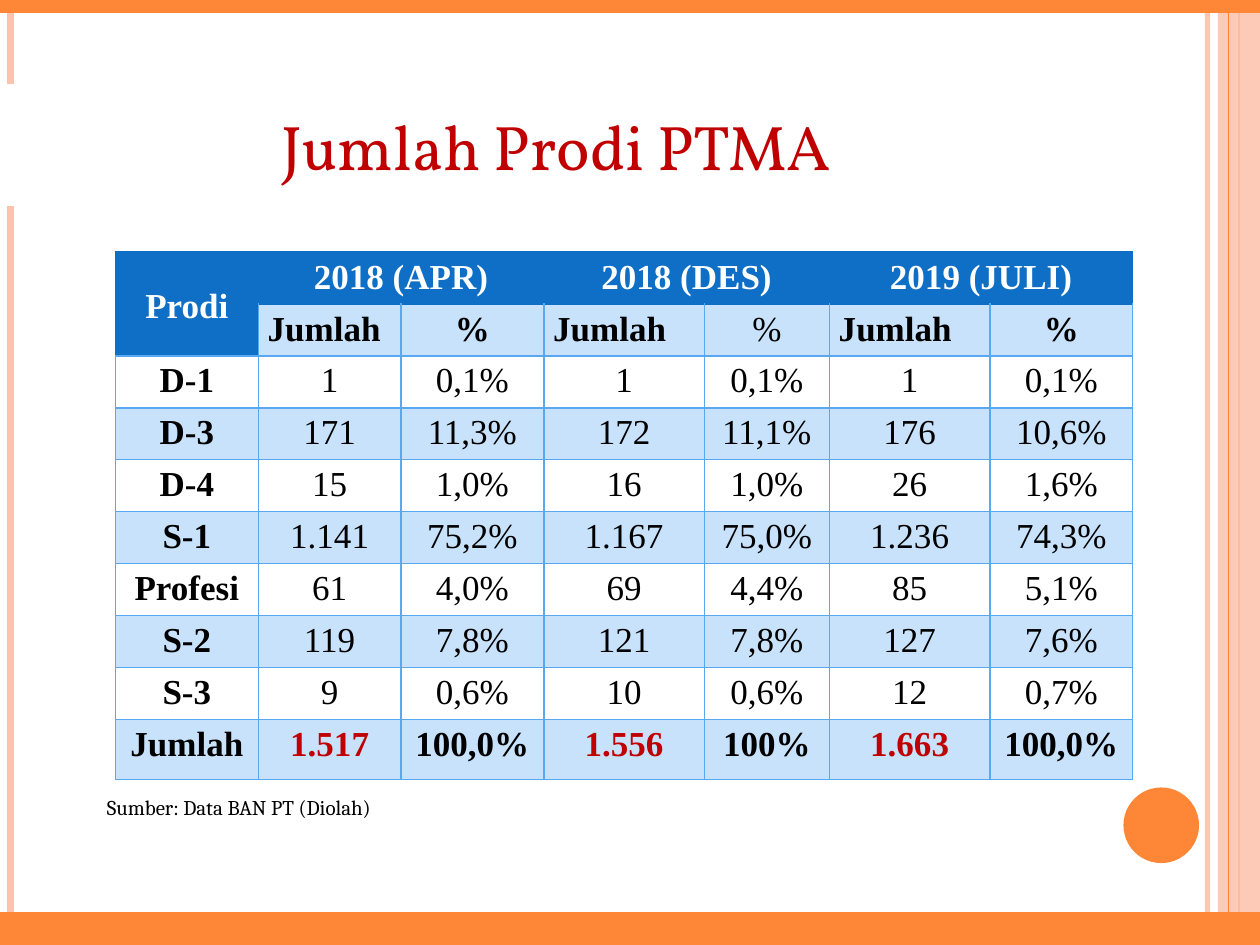
from dataclasses import dataclass

from lxml.etree import SubElement
from pptx import Presentation
from pptx.dml.color import RGBColor
from pptx.enum.shapes import MSO_CONNECTOR, MSO_SHAPE
from pptx.enum.text import MSO_ANCHOR, PP_ALIGN
from pptx.oxml.ns import qn
from pptx.util import Pt


@dataclass(frozen=True)
class Theme:
    orange: str = "FE8637"
    peach: str = "FEC3AE"
    white: str = "FFFFFF"
    black: str = "000000"
    red: str = "C00000"
    header: str = "0F6FC6"
    band: str = "C7E2FA"
    grid: str = "59A9F2"
    title_font: str = "Vollkorn"
    table_font: str = "Times New Roman"
    source_font: str = "Cambria"
    title_size: int = 36
    table_size: int = 20
    source_size: int = 12


THEME = Theme()
WIDTH, HEIGHT = 720, 540
COLUMN_WIDTHS = [81.6, 81.6, 81.6, 91.8, 71.4, 91.8, 81.6]
ROW_HEIGHTS = [29.7] * 9 + [34.3]
PERIODS = ["2018 (APR)", "2018 (DES)", "2019 (JULI)"]
PROGRAMS = [
    ["D-1", "1", "0,1%", "1", "0,1%", "1", "0,1%"],
    ["D-3", "171", "11,3%", "172", "11,1%", "176", "10,6%"],
    ["D-4", "15", "1,0%", "16", "1,0%", "26", "1,6%"],
    ["S-1", "1.141", "75,2%", "1.167", "75,0%", "1.236", "74,3%"],
    ["Profesi", "61", "4,0%", "69", "4,4%", "85", "5,1%"],
    ["S-2", "119", "7,8%", "121", "7,8%", "127", "7,6%"],
    ["S-3", "9", "0,6%", "10", "0,6%", "12", "0,7%"],
    ["Jumlah", "1.517", "100,0%", "1.556", "100%", "1.663", "100,0%"],
]


def set_values(target, values):
    for name, value in values.items():
        setattr(target, name, value)


def set_opacity(element, percent):
    color = next(element.iter(qn("a:srgbClr")))
    SubElement(color, qn("a:alpha"), val=str(percent * 1000))


def write_text(frame, text, font, size, color, bold=False, **paragraph_format):
    paragraph = frame.paragraphs[0]
    set_values(paragraph, paragraph_format)
    run = paragraph.add_run()
    run.text = text
    set_values(run.font, {"name": font, "size": Pt(size), "bold": bold})
    run.font.color.rgb = RGBColor.from_string(color)


def add_stripe(slide, x, color, weight, opacity=100):
    stripe = slide.shapes.add_connector(
        MSO_CONNECTOR.STRAIGHT, Pt(x), Pt(0), Pt(x), Pt(HEIGHT))
    stripe.line.color.rgb = RGBColor.from_string(color)
    stripe.line.width = Pt(weight)
    properties = stripe.element.spPr
    if opacity < 100:
        set_opacity(properties, opacity)
    SubElement(properties, qn("a:effectLst"))


def add_block(slide, kind, bounds, color, opacity=100):
    block = slide.shapes.add_shape(kind, *map(Pt, bounds))
    block.shadow.inherit = False
    block.fill.solid()
    block.fill.fore_color.rgb = RGBColor.from_string(color)
    block.line.fill.background()
    if opacity < 100:
        set_opacity(block.element.spPr, opacity)


def add_decoration(slide):
    add_stripe(slide, 690, THEME.peach, 3, 93)
    add_stripe(slide, 6, THEME.peach, 4.5)
    add_stripe(slide, 708, THEME.orange, 1.5)
    add_block(slide, MSO_SHAPE.RECTANGLE, (696, 0, 24, HEIGHT), THEME.peach, 87)
    add_stripe(slide, 702, THEME.orange, 0.75)
    add_block(slide, MSO_SHAPE.OVAL, (642, 450, 43.2, 43.2), THEME.orange)
    add_block(slide, MSO_SHAPE.RECTANGLE, (0, 521.2, WIDTH, 18.8), THEME.orange)
    add_block(slide, MSO_SHAPE.RECTANGLE, (0, 0, WIDTH, 7.4), THEME.orange)


def add_title(slide):
    title = slide.shapes.title
    slide.shapes.element.append(title.element)
    set_values(title, {"left": Pt(0), "top": Pt(49), "width": Pt(636), "height": Pt(67.6)})
    title.fill.solid()
    title.fill.fore_color.rgb = RGBColor.from_string(THEME.white)
    title.line.color.rgb = RGBColor.from_string(THEME.white)
    title.line.width = Pt(2)
    title.text_frame.vertical_anchor = MSO_ANCHOR.MIDDLE
    write_text(title.text_frame, "Jumlah Prodi PTMA", THEME.title_font, THEME.title_size,
               THEME.red, alignment=PP_ALIGN.CENTER, space_before=Pt(6))


def set_borders(cell, colors):
    properties = cell._tc.get_or_add_tcPr()
    for side, color in zip("LRTB", colors):
        border = SubElement(properties, qn(f"a:ln{side}"), w=str(Pt(1)))
        SubElement(SubElement(border, qn("a:solidFill")), qn("a:srgbClr"), val=color)


def format_cell(cell, row, column):
    is_header = row == 0 or (row == 1 and column == 0)
    side = THEME.header if is_header else THEME.grid
    top = THEME.header if row < 2 else THEME.grid
    bottom = THEME.header if row == 0 and column else THEME.grid
    set_borders(cell, [side, side, top, bottom])
    if is_header or row % 2:
        cell.fill.solid()
        cell.fill.fore_color.rgb = RGBColor.from_string(
            THEME.header if is_header else THEME.band)
    else:
        cell.fill.background()
    set_values(cell, {"margin_left": Pt(5.4), "margin_right": Pt(5.4),
                      "margin_top": 0, "margin_bottom": 0,
                      "vertical_anchor": MSO_ANCHOR.MIDDLE if is_header and column == 0
                      else MSO_ANCHOR.TOP})


def write_cell(cell, text, row, column, last_row):
    is_count = column % 2 == 1
    color = THEME.black
    if row == 0:
        color = THEME.white
    elif row == last_row and is_count:
        color = THEME.red
    bold = column == 0 or row in (0, last_row) or (row == 1 and column != 4)
    alignment = PP_ALIGN.LEFT if row == 1 and is_count else PP_ALIGN.CENTER
    write_text(cell.text_frame, text, THEME.table_font, THEME.table_size, color, bold,
               alignment=alignment, line_spacing=1.15)


def add_program_table(slide):
    period_row = ["Prodi"] + [text for period in PERIODS for text in (period, "")]
    measure_row = [""] + ["Jumlah", "%"] * len(PERIODS)
    rows = [period_row, measure_row] + PROGRAMS
    table = slide.shapes.add_table(
        len(rows), len(COLUMN_WIDTHS), Pt(66), Pt(144),
        Pt(sum(COLUMN_WIDTHS)), Pt(sum(ROW_HEIGHTS))).table
    set_values(table, {"first_row": False, "horz_banding": False})
    for column, width in zip(table.columns, COLUMN_WIDTHS):
        column.width = Pt(width)
    for row, height in zip(table.rows, ROW_HEIGHTS):
        row.height = Pt(height)
    for row, texts in enumerate(rows):
        for column, text in enumerate(texts):
            cell = table.cell(row, column)
            format_cell(cell, row, column)
            if text:
                write_cell(cell, text, row, column, len(rows) - 1)
    table.cell(0, 0).merge(table.cell(1, 0))
    for column in range(1, len(COLUMN_WIDTHS), 2):
        table.cell(0, column).merge(table.cell(0, column + 1))


def add_source(slide):
    source = slide.shapes.add_textbox(Pt(54), Pt(450.7), Pt(198.7), Pt(21.6))
    source.text_frame.word_wrap = True
    write_text(source.text_frame, "Sumber: Data BAN PT (Diolah)", THEME.source_font,
               THEME.source_size, THEME.black)


def main():
    presentation = Presentation()
    set_values(presentation, {"slide_width": Pt(WIDTH), "slide_height": Pt(HEIGHT)})
    slide = presentation.slides.add_slide(presentation.slide_layouts[5])
    add_decoration(slide)
    add_title(slide)
    add_program_table(slide)
    add_source(slide)
    presentation.save("out.pptx")


if __name__ == "__main__":
    main()
